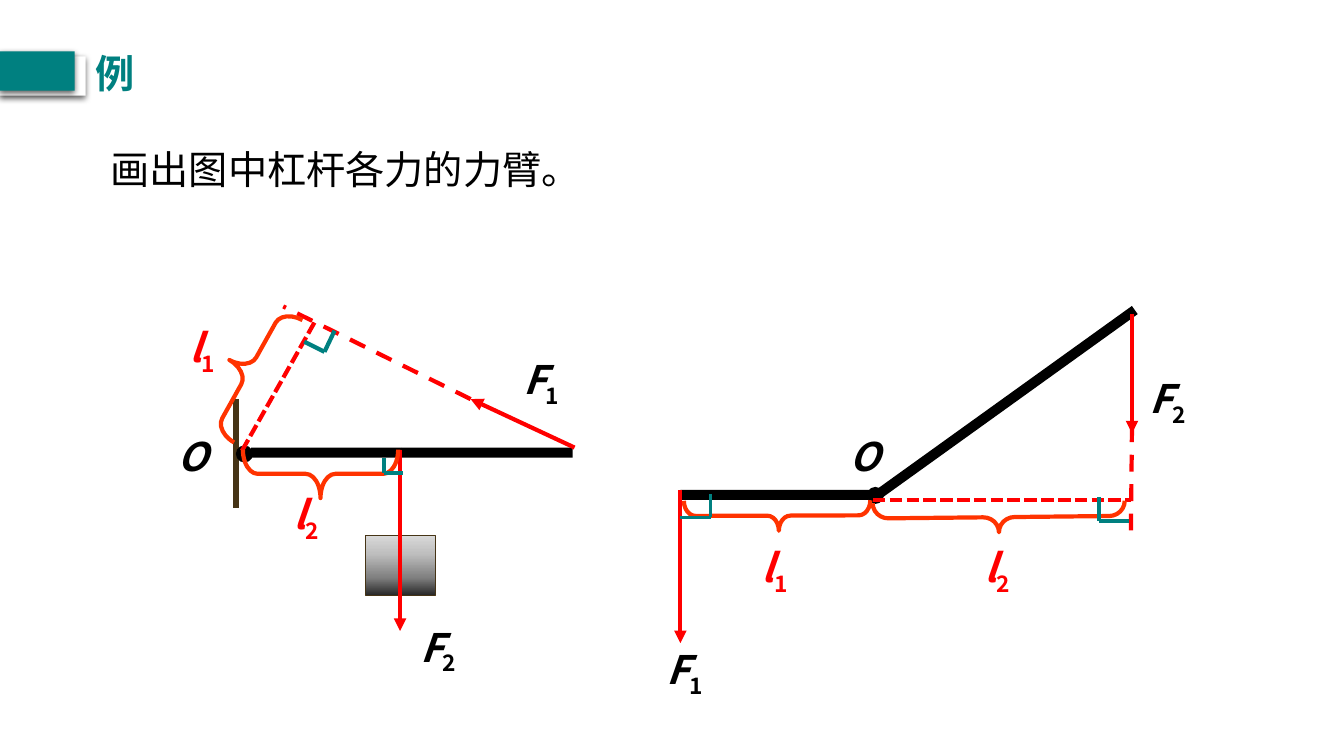
from lxml.etree import SubElement
from pptx import Presentation
from pptx.dml.color import RGBColor
from pptx.enum.dml import MSO_LINE
from pptx.enum.shapes import MSO_CONNECTOR, MSO_SHAPE
from pptx.enum.text import MSO_AUTO_SIZE
from pptx.oxml.ns import qn
from pptx.util import Pt

THEME = {
    "font": "Noto Sans CJK SC", "size": 28, "line": 3, "bar": 7.2, "pivot": 12.2,
    "black": "000000", "white": "FFFFFF", "teal": "008080", "force": "FF0000",
    "brace": "FF3300", "brown": "463416",
    "weight": [(0, "D9D9D9"), (30, "BFBFBF"), (70, "808080"), (100, "262626")],
}

TITLE = ("例", 61.2, 31.7, 269.3)
QUESTION = ("画出图中杠杆各力的力臂。", 72, 100, 353.5)
TEXT_HEIGHT = 41

# symbol, subscript, colour, left, top
LABELS = [
    ("F", "1", "black", 366.5, 250.6), ("F", "2", "black", 293, 441.4),
    ("l", "1", "force", 128.2, 227.5), ("l", "2", "force", 202.3, 347),
    ("O", "", "black", 119.5, 305.3),
    ("F", "1", "black", 468.7, 457.2), ("F", "2", "black", 814.3, 264.2),
    ("l", "1", "force", 537.1, 384.5), ("l", "2", "force", 696.2, 384.5),
    ("O", "", "black", 599.8, 305.3),
]
LABEL_WIDTHS = {"F": 42.5, "l": 34.6, "O": 37.4}

# left, top, length, rotation
BARS = [(179.3, 319.7, 229.7, 0), (486, 349.9, 138.2, 0), (601.9, 285.1, 230.4, 324.3)]
PIVOTS = [(168.5, 318.2), (619.2, 347.8)]
WALL = ((168.5, 285), (168.5, 363))
ROPE = ((285.8, 319.7), (285.8, 382.3))
WEIGHT = (261.4, 382.3, 49.7, 43.2)

FORCES = [
    ((410.4, 319.7), (336.2, 285.1)), ((285.8, 321.1), (285.8, 450.7)),
    ((486, 349.9), (486, 459.4)), ((808.6, 224.6), (808.6, 309.6)),
]
ACTION_LINES = [((336.2, 285.1), (202.3, 218.9)), ((808.6, 303.8), (807.8, 380.2))]
LEVER_ARMS = [((224.6, 230.4), (172.1, 323.3)), ((623.5, 357.1), (807.8, 357.1))]

# left, top, width, height, rotation, curl, tip position, flipped
BRACES = [
    (162, 214.6, 31.7, 100.1, 29.2, 0.345, 0.503, False),
    (211.7, 283, 34.6, 110.9, 270, 0.306, 0.5, False),
    (544.3, 301.7, 21.6, 133.2, 269.8, 0.386, 0.491, True),
    (702.7, 279.4, 21.6, 180, 269.4, 0.518, 0.5, False),
]
# end, corner, end, line width
RIGHT_ANGLES = [
    ((217.4, 244.1), (231.8, 251.3), (239, 236.2), 3),
    ((274.3, 326.9), (274.3, 337.7), (288, 337.7), 3),
    ((486, 369.4), (507.6, 369.4), (507.6, 352.8), 2.25),
    ((784.8, 355), (784.8, 372.2), (806.4, 372.2), 3),
]
# left, top, width, height, colour
TITLE_BLOCKS = [(0, 40.3, 61.2, 28.1, "white"), (0, 36.7, 53.3, 28.1, "teal")]


def color(name):
    return RGBColor.from_string(THEME[name])


def add_shape(s, kind, left, top, width, height, fill=None, rotation=0):
    """Add a preset shape with no outline or shadow; fill is a theme colour name."""
    sp = s.shapes.add_shape(kind, Pt(left), Pt(top), Pt(width), Pt(height))
    sp.shadow.inherit = False
    sp.rotation = rotation
    sp.line.fill.background()
    if fill:
        sp.fill.solid()
        sp.fill.fore_color.rgb = color(fill)
    else:
        sp.fill.background()
    return sp


def set_line(sp, name, width):
    sp.line.color.rgb = color(name)
    sp.line.width = Pt(width)


def add_line(s, start, end, name, width=THEME["line"], dash=None, arrow=False):
    points = [Pt(v) for v in start + end]
    line = s.shapes.add_connector(MSO_CONNECTOR.STRAIGHT, *points)
    set_line(line, name, width)
    if dash:
        line.line.dash_style = dash
    if arrow:
        SubElement(line.line._get_or_add_ln(), qn("a:tailEnd"), type="triangle")
    SubElement(line._element.spPr, qn("a:effectLst"))


def add_brace(s, left, top, width, height, rotation, curl, tip, flipped):
    sp = add_shape(s, MSO_SHAPE.LEFT_BRACE, left, top, width, height, rotation=rotation)
    sp.adjustments[0], sp.adjustments[1] = curl, tip
    if flipped:
        sp._element.spPr.find(qn("a:xfrm")).set("flipV", "1")
    set_line(sp, "brace", THEME["line"])


def add_weight(s):
    sp = add_shape(s, MSO_SHAPE.RECTANGLE, *WEIGHT)
    sp.fill.gradient()
    sp.fill.gradient_angle = 270
    stops = sp._element.spPr.find(qn("a:gradFill")).find(qn("a:gsLst"))
    stops.clear()
    for position, value in THEME["weight"]:
        stop = SubElement(stops, qn("a:gs"), pos=str(position * 1000))
        SubElement(stop, qn("a:srgbClr"), val=value)
    set_line(sp, "brown", 0.75)


def add_drop_shadow(sp):
    effects = sp._element.spPr.find(qn("a:effectLst"))
    shadow = SubElement(effects, qn("a:outerShdw"), blurRad=str(Pt(4.5)),
                        dist=str(Pt(1.5)), dir="5400000", rotWithShape="0")
    shade = SubElement(shadow, qn("a:srgbClr"), val=THEME["black"])
    SubElement(shade, qn("a:alpha"), val="63000")


def add_text(s, runs, left, top, width, name, bold=False, wrap=False):
    """Add one line of text; runs holds (text, italic, subscript) tuples."""
    box = s.shapes.add_textbox(Pt(left), Pt(top), Pt(width), Pt(TEXT_HEIGHT))
    tf = box.text_frame
    tf.word_wrap = wrap
    tf.auto_size = MSO_AUTO_SIZE.SHAPE_TO_FIT_TEXT
    for text, italic, subscript in runs:
        r = tf.paragraphs[0].add_run()
        r.text = text
        r.font.size = Pt(THEME["size"])
        r.font.bold, r.font.italic = bold, italic
        r.font.color.rgb = color(name)
        r.font.name = THEME["font"]
        rPr = r._r.get_or_add_rPr()
        SubElement(rPr, qn("a:ea"), typeface=THEME["font"])
        if subscript:
            rPr.set("baseline", "-25000")


def main():
    prs = Presentation()
    prs.slide_width, prs.slide_height = Pt(960), Pt(540)
    s = prs.slides.add_slide(prs.slide_layouts[6])

    question, *place = QUESTION
    add_text(s, [(question, False, False)], *place, "black")

    add_line(s, *WALL, "brown", 4.5)
    for left, top in PIVOTS:
        add_shape(s, MSO_SHAPE.OVAL, left, top, THEME["pivot"], THEME["pivot"], "black")
    for left, top, length, rotation in BARS:
        add_shape(s, MSO_SHAPE.RECTANGLE, left, top, length, THEME["bar"], "black", rotation)
    add_line(s, *ROPE, "black", 2.25)
    add_weight(s)

    for ends in FORCES:
        add_line(s, *ends, "force", arrow=True)
    for ends in ACTION_LINES:
        add_line(s, *ends, "force", dash=MSO_LINE.DASH)
    for ends in LEVER_ARMS:
        add_line(s, *ends, "force", dash=MSO_LINE.SQUARE_DOT)
    for brace in BRACES:
        add_brace(s, *brace)
    for first, corner, last, width in RIGHT_ANGLES:
        add_line(s, first, corner, "teal", width)
        add_line(s, corner, last, "teal", width)

    for symbol, index, name, left, top in LABELS:
        runs = [(symbol, True, False)]
        if index:
            runs.append((index, False, True))
        add_text(s, runs, left, top, LABEL_WIDTHS[symbol], name, bold=True)

    for *place, name in TITLE_BLOCKS:
        add_drop_shadow(add_shape(s, MSO_SHAPE.RECTANGLE, *place, name))
    title, *place = TITLE
    add_text(s, [(title, False, False)], *place, "teal", bold=True, wrap=True)

    prs.save("out.pptx")


if __name__ == "__main__":
    main()
